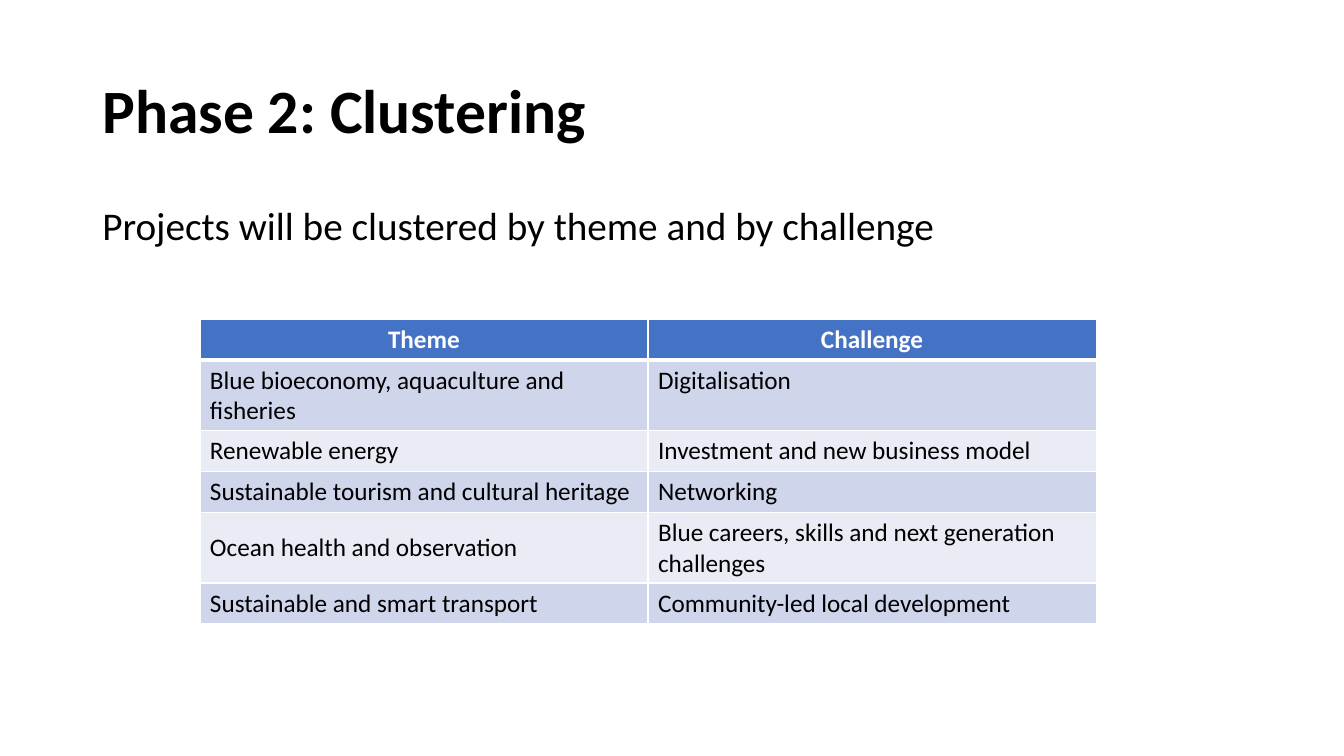
from lxml.etree import SubElement
from pptx import Presentation
from pptx.dml.color import RGBColor
from pptx.enum.text import MSO_ANCHOR as Anchor, PP_ALIGN as Align
from pptx.oxml.ns import qn
from pptx.util import Inches, Pt

COLUMNS, ROWS = 160, 90
BLACK, WHITE, BLUE = "000000", "FFFFFF", "4472C4"
BANDS = ["CFD5EA", "E9EBF5"]
CLUSTERS = [
    ("Theme", "Challenge"),
    ("Blue bioeconomy, aquaculture and fisheries", "Digitalisation"),
    ("Renewable energy", "Investment and new business model"),
    ("Sustainable tourism and cultural heritage", "Networking"),
    ("Ocean health and observation", "Blue careers, skills and next generation challenges"),
    ("Sustainable and smart transport", "Community-led local development"),
]


def color(value):
    return RGBColor.from_string(value)


class SlideBuilder:
    font = "Calibri"

    def __init__(self, deck):
        self.column = deck.slide_width / COLUMNS
        self.row = deck.slide_height / ROWS
        self.slide = deck.slides.add_slide(deck.slide_layouts[6])

    def place(self, left, top, width, height):
        return (int(left * self.column), int(top * self.row),
                int(width * self.column), int(height * self.row))

    def style(self, para, size, fill, bold=False):
        for span in para.runs:
            span.font.name = self.font
            span.font.size = Pt(size)
            span.font.bold = bold
            span.font.color.rgb = color(fill)

    def text(self, content, area, size, bold=False, anchor=Anchor.TOP, before=0):
        box = self.slide.shapes.add_textbox(*self.place(*area))
        frame = box.text_frame
        frame.word_wrap = True
        frame.vertical_anchor = anchor
        frame.text = content
        para = frame.paragraphs[0]
        para.line_spacing = 0.9
        para.space_before = Pt(before)
        self.style(para, size, BLACK, bold)

    def borders(self, cell, top, bottom):
        properties = cell._tc.get_or_add_tcPr()
        for side, width in (("L", 1), ("R", 1), ("T", top), ("B", bottom)):
            line = SubElement(properties, qn(f"a:ln{side}"), w=str(Pt(width)))
            solid = SubElement(line, qn("a:solidFill"))
            SubElement(solid, qn("a:srgbClr"), val=WHITE)

    def table(self, rows, area, size, centred_row):
        frame = self.slide.shapes.add_table(len(rows), len(rows[0]), *self.place(*area))
        for index, values in enumerate(rows):
            header = index == 0
            for position, value in enumerate(values):
                cell = frame.table.cell(index, position)
                cell.text = value
                self.borders(cell, 3 if index == 1 else 1, 3 if header else 1)
                cell.fill.solid()
                cell.fill.fore_color.rgb = color(BLUE if header else BANDS[(index - 1) % 2])
                para = cell.text_frame.paragraphs[0]
                para.alignment = Align.CENTER if header else Align.LEFT
                self.style(para, size, WHITE if header else BLACK, header)
        frame.table.cell(centred_row, 0).vertical_anchor = Anchor.MIDDLE


def main():
    deck = Presentation()
    deck.slide_width, deck.slide_height = Inches(13.33), Inches(7.5)
    page = SlideBuilder(deck)
    page.text("Phase 2: Clustering", (11, 4.8, 138, 17.4), 44, bold=True, anchor=Anchor.MIDDLE)
    page.text("Projects will be clustered by theme and by challenge",
              (11, 24, 138, 57.1), 28, before=10)
    page.table(CLUSTERS, (23.8, 38, 106.7, 29.2), 18, centred_row=4)
    deck.save("out.pptx")


if __name__ == "__main__":
    main()
